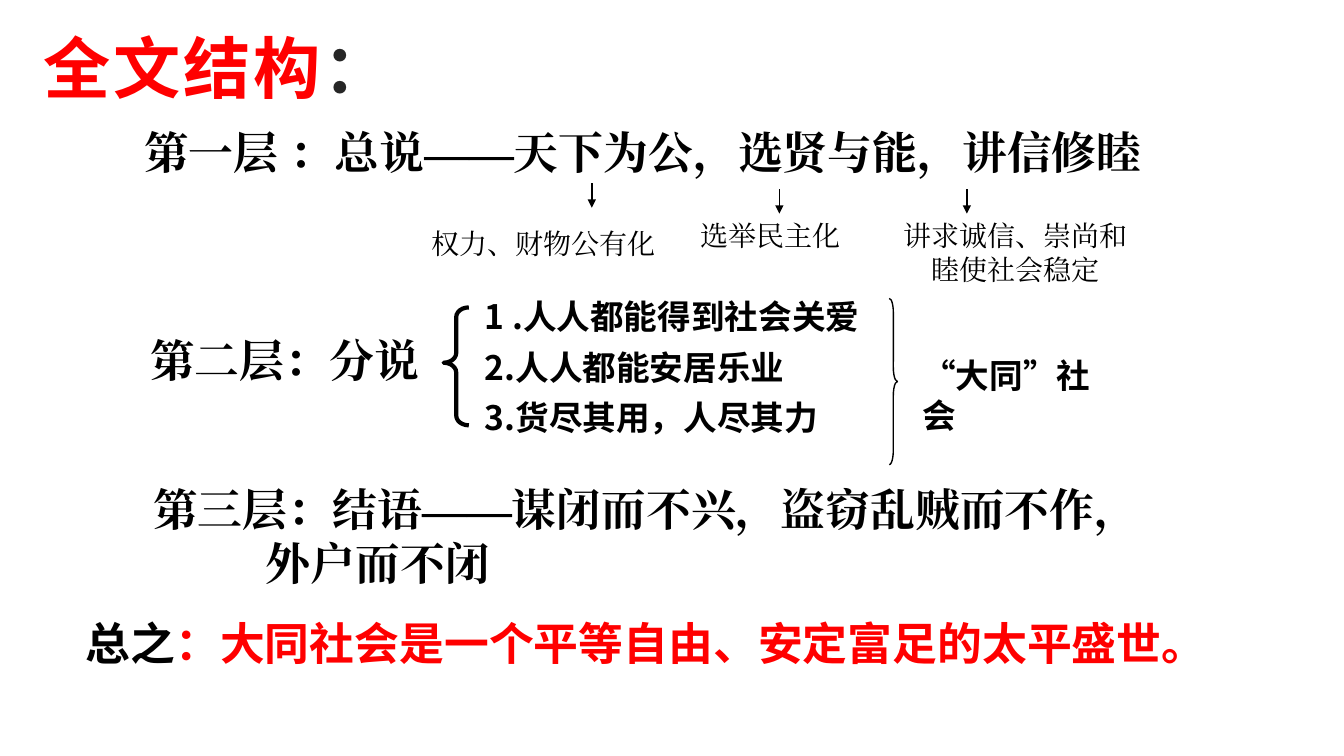
from pptx import Presentation
from pptx.dml.color import RGBColor
from pptx.enum.shapes import MSO_CONNECTOR, MSO_SHAPE
from pptx.enum.text import MSO_ANCHOR, PP_ALIGN
from pptx.oxml.ns import qn
from pptx.util import Inches, Pt
from lxml import etree

LINE = MSO_CONNECTOR.STRAIGHT
LEFT, CENTER = PP_ALIGN.LEFT, PP_ALIGN.CENTER
BLACK = RGBColor(0, 0, 0)
RED = RGBColor(255, 0, 0)
GRAY = RGBColor(0x26, 0x26, 0x26)
TIMES, ARIAL, NOTO = "Times New Roman", "Arial", "Noto Sans CJK SC"

prs = Presentation()
prs.slide_width, prs.slide_height = Inches(13.33), Inches(7.5)
slide = prs.slides.add_slide(prs.slide_layouts[5])


def style(run, size, face, color=BLACK, bold=True, asian=None):
    run.font.size, run.font.name = Pt(size), face
    run.font.bold, run.font.color.rgb = bold, color
    props = run._r.get_or_add_rPr()
    props.set("lang", "zh-CN")
    etree.SubElement(props, qn("a:ea")).set("typeface", asian or face)


def write(text, box, size, face, bold=True, align=LEFT, asian=None):
    frame = slide.shapes.add_textbox(*map(Inches, box)).text_frame
    frame.word_wrap = True
    frame.text = text
    para = frame.paragraphs[0]
    para.alignment = align
    style(para.runs[0], size, face, bold=bold, asian=asian)
    return para


# Title
title = slide.shapes.title
title.left, title.top = Inches(0.33), Inches(0.12)
title.width, title.height = Inches(3.82), Inches(1.08)
title.text_frame.text = "全文结构"
title.text_frame.vertical_anchor = MSO_ANCHOR.MIDDLE
head = title.text_frame.paragraphs[0]
head.alignment = LEFT
head.add_run().text = "："
for run, color in zip(head.runs, (RED, GRAY)):
    style(run, 48, ARIAL, color)
    run._r.rPr.set("spc", "200")

# The three layers
write("第一层 ：总说——天下为公，选贤与能，讲信修睦",
      (1.33, 1.19, 10.41, 0.64), 32, TIMES)
write("第二层：分说", (1.39, 3.25, 3.86, 0.64), 32, TIMES)
last = write("第三层：结语——谋闭而不兴，盗窃乱贼而不作，外户而不闭",
             (1.42, 4.73, 9.67, 1.18), 32, TIMES)
hang = Inches(1.12)
last._p.get_or_add_pPr().set("marL", str(hang))
last._p.pPr.set("indent", str(-hang))

# Notes under the first layer
notes = [
    ("权力、财物公有化", (4.18, 2.2, 2.68, 0.44), LEFT),
    ("选举民主化", (6.85, 2.12, 2.05, 0.44), LEFT),
    ("讲求诚信、崇尚和睦使社会稳定", (8.77, 2.12, 2.6, 0.77), CENTER),
]
for text, box, align in notes:
    write(text, box, 20, TIMES, False, align)

# Arrows down to the notes
for x, y in ((5.87, 1.82), (7.73, 1.88), (9.59, 1.88)):
    arrow = slide.shapes.add_connector(
        LINE, Inches(x), Inches(y), Inches(x), Inches(y + 0.24))
    arrow.line.color.rgb, arrow.line.width = BLACK, Pt(1)
    tail = etree.SubElement(arrow.line._get_or_add_ln(), qn("a:tailEnd"))
    tail.set("type", "triangle")
    etree.SubElement(arrow._element.spPr, qn("a:effectLst"))

# Points of the second layer
points = ["1 .人人都能得到社会关爱", "2.人人都能安居乐业", "3.货尽其用，人尽其力"]
for i, text in enumerate(points):
    write(text, (4.71, 2.89 + 0.5 * i, 4.33, 0.5), 24, NOTO)

# Braces around the points
braces = [
    (MSO_SHAPE.LEFT_BRACE, (4.4, 3.05, 0.25, 1.17), (0.385, 0.469), 3),
    (MSO_SHAPE.RIGHT_BRACE, (8.82, 2.96, 0.08, 1.65), (1.748, 0.5), 1),
]
for kind, box, bends, width in braces:
    brace = slide.shapes.add_shape(kind, *map(Inches, box))
    brace.shadow.inherit = False
    brace.fill.background()
    brace.line.color.rgb, brace.line.width = BLACK, Pt(width)
    for i, bend in enumerate(bends):
        brace.adjustments[i] = bend
ideal = write("“大同”社会", (9.05, 3.47, 2.04, 0.5), 24, TIMES, asian=NOTO)
ideal.line_spacing = Pt(28.8)

# Summary
total = write("总之", (0.75, 6.06, 11.79, 0.64), 32, ARIAL)
claim = total.add_run()
claim.text = "：大同社会是一个平等自由、安定富足的太平盛世。"
style(claim, 32, ARIAL, RED)

prs.save("out.pptx")
